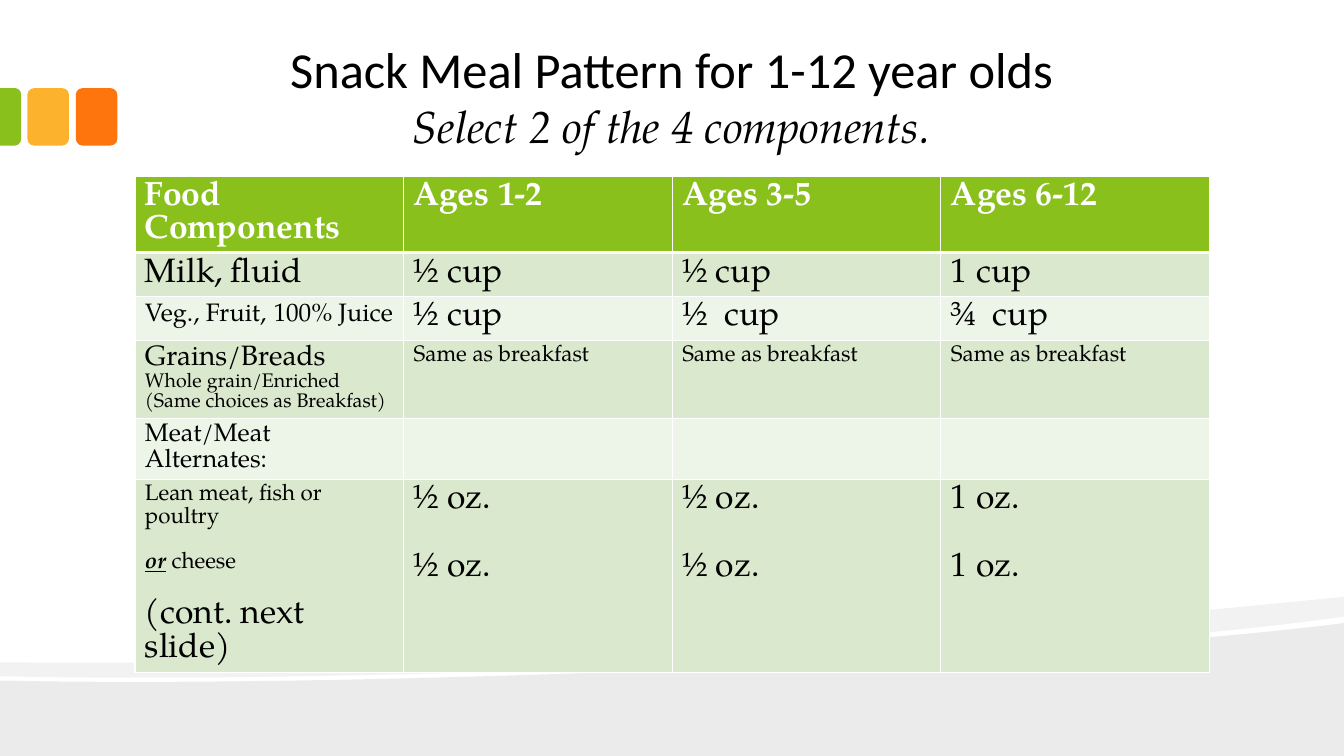
from lxml.etree import SubElement
from pptx import Presentation
from pptx.dml.color import RGBColor
from pptx.enum.shapes import MSO_SHAPE as Shape
from pptx.enum.text import MSO_ANCHOR as Anchor, PP_ALIGN as Align
from pptx.oxml.ns import qn
from pptx.util import Cm, Pt

GREEN = RGBColor(0x89, 0xC0, 0x1C)
YELLOW = RGBColor(0xFC, 0xB2, 0x2C)
ORANGE = RGBColor(0xFE, 0x75, 0x0E)
BAND_DARK = RGBColor(0xDA, 0xE8, 0xCD)
BAND_LIGHT = RGBColor(0xED, 0xF4, 0xE8)
BLACK = RGBColor(0, 0, 0)
WHITE = RGBColor(255, 255, 255)
SERIF = "TeX Gyre Pagella"


def paint(shape, color):
    shape.shadow.inherit = False
    shape.line.fill.background()
    shape.fill.solid()
    shape.fill.fore_color.rgb = color


deck = Presentation()
deck.slide_width, deck.slide_height = Cm(33.87), Cm(19.05)
slide = deck.slides.add_slide(deck.slide_layouts[5])

# Grey waves along the bottom: a segment of one point is a line, of three a cubic curve
front_wave = [
    [(33.87, 15.7)], [(33.87, 19.05)], [(0, 19.05)], [(0, 17.15)],
    [(8.94, 17.35), (26.47, 16.64), (33.87, 15.7)]]
back_wave = [
    [(33.87, 15.04)], [(33.87, 15.54)],
    [(31.88, 15.82), (29.18, 16.08), (26.14, 16.28)],
    [(17.73, 16.84), (6.55, 17.2), (0, 17.04)], [(0, 16.69)],
    [(16.56, 16.81), (24.66, 15.93), (33.87, 15.04)]]
for segments, opacity in ((front_wave, 8), (back_wave, 5)):
    points = [(Cm(x), Cm(y)) for segment in segments for x, y in segment]
    builder = slide.shapes.build_freeform(*points[0])
    builder.add_line_segments(points[1:])
    wave = builder.convert_to_shape()
    paint(wave, BLACK)
    tint = wave.fill._xPr.find(qn("a:solidFill"))[0]
    SubElement(tint, qn("a:alpha"), val=str(opacity * 1000))
    # Merge the three points of each curve into one cubic segment
    steps = list(wave._element.iter(qn("a:lnTo")))
    for segment in segments[1:]:
        first, *others = steps[:len(segment)]
        steps = steps[len(segment):]
        if others:
            first.tag = qn("a:cubicBezTo")
            for other in others:
                first.append(other[0])
                other.getparent().remove(other)

# Coloured blocks at the left edge
for left, color in ((1.91, ORANGE), (0.69, YELLOW)):
    block = slide.shapes.add_shape(Shape.ROUNDED_RECTANGLE, Cm(left), Cm(2.22), Cm(1.05), Cm(1.45))
    paint(block, color)
edge_block = slide.shapes.add_shape(Shape.ROUND_2_SAME_RECTANGLE, Cm(-0.46), Cm(2.68), Cm(1.45), Cm(0.53))
edge_block.rotation = 90
edge_block.adjustments[0] = 0.29
paint(edge_block, GREEN)

# Title
title = slide.shapes.title
title.left, title.top, title.width, title.height = Cm(3.39), Cm(0.41), Cm(27.08), Cm(3.61)
frame = title.text_frame
frame.text = "Snack Meal Pattern for 1-12 year olds\vSelect 2 of the 4 components."
frame.vertical_anchor = Anchor.BOTTOM
frame.margin_left = frame.margin_right = Cm(0.33)
frame.margin_top = frame.margin_bottom = Cm(0.18)
para = frame.paragraphs[0]
para.alignment = Align.CENTER
for span, size, font, italic in zip(para.runs, (36, 32), ("Calibri", SERIF), (False, True)):
    span.font.size, span.font.name, span.font.italic = Pt(size), font, italic
    span.font.color.rgb = BLACK

# Table rows of cells, each a list of paragraphs (space before, [(text, size)])
meat = [(0, [("Lean meat, fish or poultry", 16)]),
        (16, [("or", 16), (" cheese", 16)]),
        (18, [("(cont. next slide)", 24)])]
grains = [(0, [("Grains/Breads", 20)]),
          (0, [("Whole grain/Enriched", 14)]),
          (0, [("(Same choices as Breakfast)", 14)])]
juice = [(0, [("Veg., Fruit,", 18), (" ", 20), ("100% Juice", 18)])]
rows = [
    [[(0, [(text, 24)])] for text in ("Food Components", "Ages 1-2", "Ages 3-5", "Ages 6-12")],
    [[(0, [(text, 24)])] for text in ("Milk, fluid", "½ cup", "½ cup", "1 cup")],
    [juice] + [[(0, [(text, 24)])] for text in ("½ cup", "½  cup", "¾  cup")],
    [grains] + [[(0, [("Same as breakfast", 16)])]] * 3,
    [[(0, [("Meat/Meat Alternates:", 18)])], [], [], []],
    [meat] + [[(0, [(text, 24)]), (24, [(text, 24)])] for text in ("½ oz.", "½ oz.", "1 oz.")],
]
table_frame = slide.shapes.add_table(len(rows), 4, Cm(3.4), Cm(4.45), Cm(27.08), Cm(6.24))
table = table_frame.table
for column in table.columns:
    column.width = Cm(6.77)
for row_index, cells in enumerate(rows):
    header = row_index == 0
    band = GREEN if header else BAND_DARK if row_index % 2 else BAND_LIGHT
    for column_index, paragraphs in enumerate(cells):
        cell = table.cell(row_index, column_index)
        # Header borders, heavier below
        if header:
            cell_format = cell._tc.get_or_add_tcPr()
            for side, weight in (("L", 1), ("R", 1), ("T", 1), ("B", 3)):
                border = SubElement(cell_format, qn(f"a:ln{side}"), w=str(Pt(weight)))
                border_fill = SubElement(border, qn("a:solidFill"))
                SubElement(border_fill, qn("a:srgbClr"), val=str(WHITE))
        cell.fill.solid()
        cell.fill.fore_color.rgb = band
        for index, (space, spans) in enumerate(paragraphs):
            frame = cell.text_frame
            para = frame.add_paragraph() if index else frame.paragraphs[0]
            if space:
                para.space_before = Pt(space)
            for text, size in spans:
                span = para.add_run()
                span.text = text
                font = span.font
                font.name, font.size = SERIF, Pt(size)
                font.color.rgb = WHITE if header else BLACK
                stressed = text == "or"
                font.bold = header or stressed
                font.italic = font.underline = stressed
table_frame.height = Cm(13.13)

deck.save("out.pptx")
